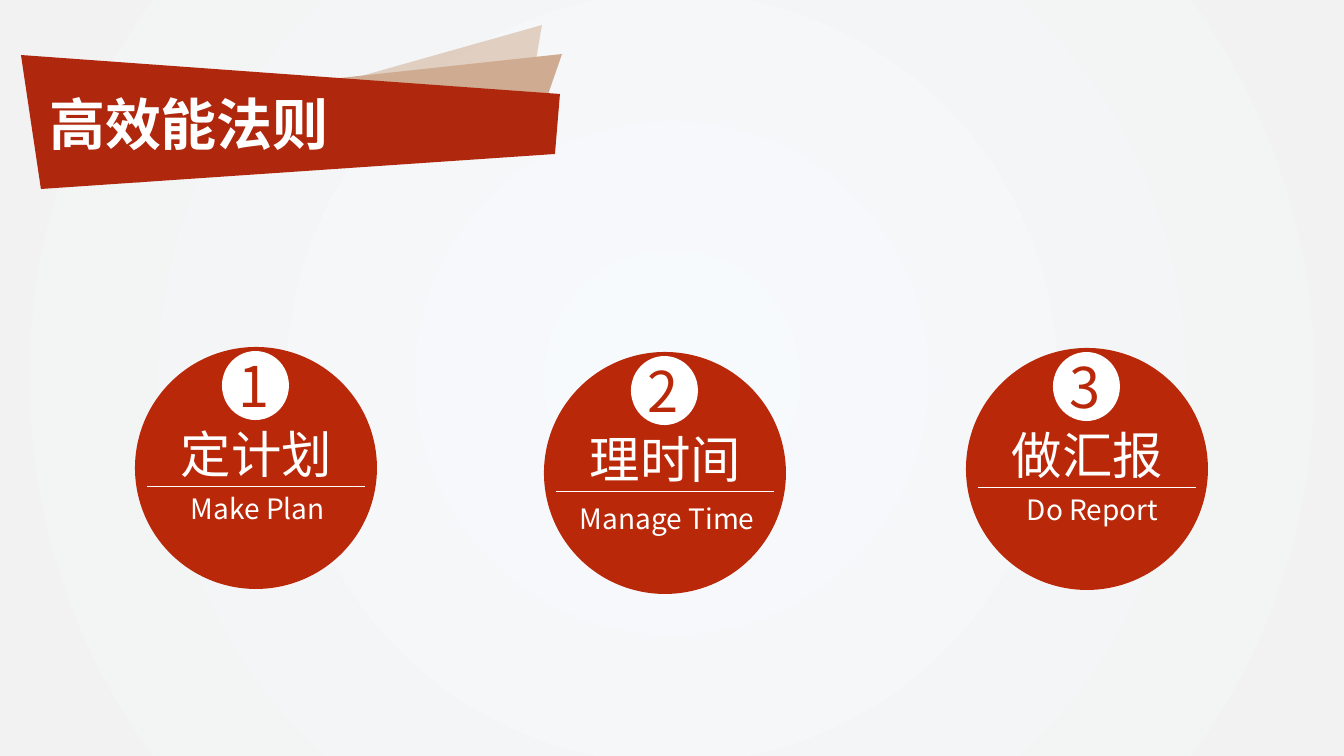
"""Build a slide with a ribbon title and three numbered circles."""
import dataclasses

import lxml.etree
import pptx
import pptx.dml.color
import pptx.enum.shapes
import pptx.enum.text
import pptx.oxml.ns
import pptx.util

TITLE = "高效能法则"
RULES = [
    {"name": "定计划", "caption": "Make Plan", "circle": (135, 347), "caption_box": (181, 487, 159, 43)},
    {"name": "理时间", "caption": "Manage Time", "circle": (544, 352), "caption_box": (570, 497, 204, 43)},
    {"name": "做汇报", "caption": "Do Report", "circle": (966, 348), "caption_box": (1017, 488, 158, 43)},
]
RIBBONS = [
    ("tan", 52, [(103, 149), (542, 25), (524, 131), (137, 183)]),
    ("tan", 100, [(109, 103), (562, 54), (527, 155), (137, 143)]),
    ("ribbon", 100, [(21, 55), (560, 94), (555, 154), (41, 189)]),
]
TITLE_BOX = (39, 54, 537, 146)
DIAMETER = 242
BADGE = (87, 4, 67, 69)
NUMBER = (94, 0, 53, 78)
NAME = (5, 71, 233, 71)
RULE_LINE = (12, 140, 218)
PX = 914400 / 100.8


@dataclasses.dataclass(frozen=True)
class Theme:
    """Colours, fonts and type sizes."""
    red: str = "B92909"
    ribbon: str = "AF270D"
    tan: str = "CFAB91"
    white: str = "FFFFFF"
    glow: str = "F7FAFD"
    edge: str = "F2F2F2"
    title_font: str = "Calibri"
    font: str = "Noto Sans CJK SC"
    big: int = 40
    name: int = 36
    caption: int = 20


THEME = Theme()


def emu(length):
    """Turn px into EMU."""
    return round(length * PX)


def place(offset, origin):
    """Move a box by the corner of its circle."""
    left, top, width, height = offset
    return left + origin[0], top + origin[1], width, height


def rgb(value):
    """Give a colour object for a hex value."""
    return pptx.dml.color.RGBColor.from_string(value)


def child(parent, tag, **attributes):
    """Add a drawing element."""
    return lxml.etree.SubElement(parent, pptx.oxml.ns.qn(tag), attributes)


def paint(shape, colour, opacity=100):
    """Give a shape a plain fill without line or shadow."""
    shape.shadow.inherit = False
    shape.fill.solid()
    shape.fill.fore_color.rgb = rgb(colour)
    shape.line.fill.background()
    if opacity < 100:
        fill = shape.fill._xPr.find(pptx.oxml.ns.qn("a:solidFill"))
        child(fill[0], "a:alpha", val=str(opacity * 1000))


def write(box, text, *, size, colour=THEME.white, font=THEME.font, bold=False,
          centred=False, wrap=True, grow=True, middle=False, spacing=None):
    """Put formatted text into a box."""
    frame = box.text_frame
    frame.text = text
    frame.word_wrap = wrap
    fit = pptx.enum.text.MSO_AUTO_SIZE
    frame.auto_size = fit.SHAPE_TO_FIT_TEXT if grow else fit.NONE
    anchor = pptx.enum.text.MSO_ANCHOR
    frame.vertical_anchor = anchor.MIDDLE if middle else anchor.TOP
    para = frame.paragraphs[0]
    align = pptx.enum.text.PP_ALIGN
    para.alignment = align.CENTER if centred else align.LEFT
    para.line_spacing = spacing
    span = para.runs[0]
    span.font.size = pptx.util.Pt(size)
    span.font.name = font
    span.font.bold = bold
    span.font.color.rgb = rgb(colour)
    child(span.font._element, "a:ea", typeface=THEME.font)


def add_text(page, box, text, **style):
    """Add a text box."""
    write(page.shapes.add_textbox(*map(emu, box)), text, **style)


def add_ellipse(page, box, colour):
    """Add a filled ellipse."""
    kind = pptx.enum.shapes.MSO_SHAPE.OVAL
    paint(page.shapes.add_shape(kind, *map(emu, box)), colour)


def add_rule_line(page, origin):
    """Add the thin line between name and caption."""
    left, top, width = RULE_LINE
    x, y = origin[0] + left, origin[1] + top
    kind = pptx.enum.shapes.MSO_CONNECTOR.STRAIGHT
    line = page.shapes.add_connector(kind, *map(emu, (x, y, x + width, y)))
    line.line.color.rgb = rgb(THEME.white)
    line.line.width = pptx.util.Pt(0.75)
    child(line._element.spPr, "a:effectLst")


def set_background(page):
    """Fill the page with a round gradient."""
    fill = page.background.fill
    fill.gradient()
    for stop, colour, position in zip(fill.gradient_stops, (THEME.glow, THEME.edge), (0, 1)):
        stop.color.rgb = rgb(colour)
        stop.position = position
    gradient = page.background._cSld.find(".//" + pptx.oxml.ns.qn("a:gradFill"))
    gradient.remove(gradient.find(pptx.oxml.ns.qn("a:lin")))
    circle = child(gradient, "a:path", path="circle")
    child(circle, "a:fillToRect", l="50000", t="50000", r="50000", b="50000")


def add_title(page):
    """Draw the ribbons and set the title over them."""
    for colour, opacity, points in RIBBONS:
        outline = page.shapes.build_freeform(*points[0], scale=PX)
        outline.add_line_segments(points[1:], close=True)
        paint(outline.convert_to_shape(), getattr(THEME, colour), opacity)
    title = page.shapes.title
    title.left, title.top, title.width, title.height = map(emu, TITLE_BOX)
    write(title, TITLE, size=THEME.big, font=THEME.title_font, bold=True,
          grow=False, middle=True, spacing=0.9)
    title.element.getparent().append(title.element)


def add_rule(page, number, rule):
    """Draw one numbered circle."""
    origin = rule["circle"]
    add_ellipse(page, (*origin, DIAMETER, DIAMETER), THEME.red)
    add_ellipse(page, place(BADGE, origin), THEME.white)
    add_text(page, place(NUMBER, origin), str(number), size=THEME.big, colour=THEME.red, wrap=False)
    add_text(page, rule["caption_box"], rule["caption"], size=THEME.caption, wrap=False)
    add_text(page, place(NAME, origin), rule["name"], size=THEME.name, centred=True)
    add_rule_line(page, origin)


def main():
    """Build and save the deck."""
    deck = pptx.Presentation()
    deck.slide_width, deck.slide_height = emu(1344), emu(756)
    page = deck.slides.add_slide(deck.slide_layouts[5])
    set_background(page)
    add_title(page)
    for number, rule in enumerate(RULES, start=1):
        add_rule(page, number, rule)
    deck.save("out.pptx")


if __name__ == "__main__":
    main()
